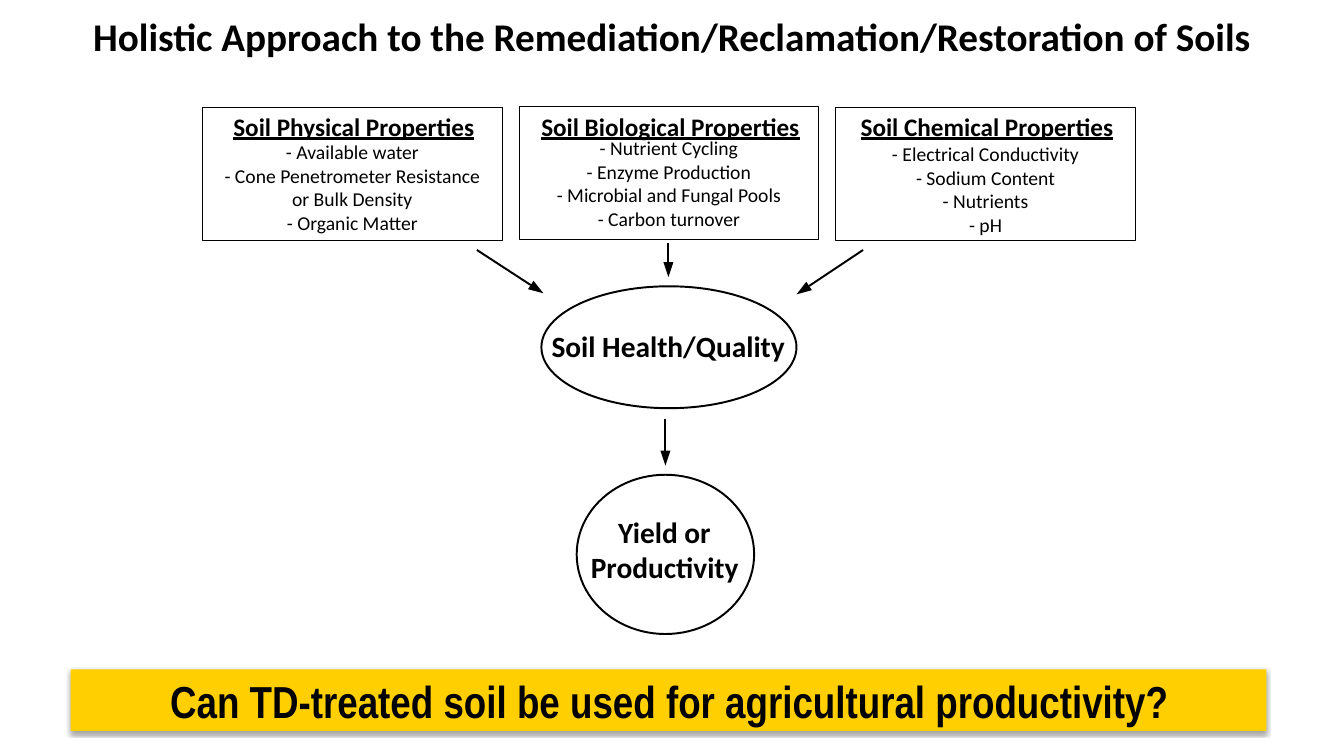
from dataclasses import dataclass
from math import hypot

from lxml.etree import SubElement
from pptx import Presentation
from pptx.dml.color import RGBColor as Rgb
from pptx.enum.shapes import MSO_CONNECTOR as Link, MSO_SHAPE as Form
from pptx.enum.text import MSO_ANCHOR as Anchor, MSO_AUTO_SIZE as Fit, PP_ALIGN as Align
from pptx.oxml.ns import qn
from pptx.util import Inches, Pt


@dataclass(frozen=True)
class Theme:
    ink: Rgb = Rgb(0, 0, 0)
    paper: Rgb = Rgb(255, 255, 255)
    gold: Rgb = Rgb(0xFF, 0xCF, 0x01)
    face: str = "Calibri"
    narrow: str = "Arial Narrow"
    title: float = 28
    head: float = 18
    item: float = 14
    node: float = 21
    claim: float = 32
    thin: float = 0.63
    thick: float = 1.38


class Board:
    def __init__(self, slide, theme):
        self.slide = slide
        self.shapes = slide.shapes
        self.theme = theme

    def place(self, shape, area):
        shape.left, shape.top, shape.width, shape.height = map(Inches, area)

    def letter(self, shape, lines, size, bold=True, under=False, face=None,
               align=Align.CENTER, wrap=True, inset=(0, 0), fit=Fit.NONE):
        frame = shape.text_frame
        frame.word_wrap = wrap
        frame.auto_size = fit
        frame.vertical_anchor = Anchor.TOP
        frame.margin_left = frame.margin_right = Inches(inset[0])
        frame.margin_top = frame.margin_bottom = Inches(inset[1])
        for row, line in enumerate(lines):
            para = frame.add_paragraph() if row else frame.paragraphs[0]
            props = para._p.get_or_add_pPr()
            props.set("marL", "0")
            props.set("indent", "0")
            SubElement(props, qn("a:buNone"))
            para.alignment = align
            para.space_before = Pt(0)
            run = para.add_run()
            run.text = line
            font = run.font
            font.name = face or self.theme.face
            font.size = Pt(size)
            font.bold = bold
            font.underline = under
            font.color.rgb = self.theme.ink

    def title(self, text, area):
        shape = self.shapes.title
        self.place(shape, area)
        shape.fill.solid()
        shape.fill.fore_color.rgb = self.theme.paper
        self.letter(shape, [text], self.theme.title)

    def list(self, spot, lines, area):
        shape = self.slide.placeholders[spot]
        self.place(shape, area)
        self.letter(shape, lines, self.theme.item, bold=False)
        tree = self.shapes._spTree
        tree.remove(shape._element)
        tree.append(shape._element)

    def label(self, text, area, size, **style):
        shape = self.shapes.add_textbox(*map(Inches, area))
        self.letter(shape, [text], size, **style)

    def node(self, text, area):
        self.label(text, area, self.theme.node, align=Align.LEFT,
                   wrap=False, fit=Fit.SHAPE_TO_FIT_TEXT)

    def shape(self, form, area, fill, line=None):
        shape = self.shapes.add_shape(form, *map(Inches, area))
        shape.shadow.inherit = False
        shape.fill.solid()
        shape.fill.fore_color.rgb = fill
        if line:
            shape.line.color.rgb = self.theme.ink
            shape.line.width = Pt(line)
        else:
            shape.line.fill.background()
        return shape

    def banner(self, area):
        shape = self.shape(Form.RECTANGLE, area, self.theme.gold)
        glow = SubElement(
            shape._element.spPr.find(qn("a:effectLst")), qn("a:outerShdw"),
            blurRad=str(Pt(3.1)), dist=str(Pt(1.8)), dir="5400000", rotWithShape="0")
        tint = SubElement(glow, qn("a:srgbClr"), val=str(self.theme.ink))
        SubElement(tint, qn("a:alpha"), val="35000")

    def arrow(self, start, tip, size=0.15, half=0.05):
        (x, y), (a, b) = start, tip
        span = hypot(a - x, b - y)
        u, v = (a - x) / span, (b - y) / span
        neck = a - size * u, b - size * v
        line = self.shapes.add_connector(Link.STRAIGHT, *map(Inches, start + neck))
        line.line.color.rgb = self.theme.ink
        line.line.width = Pt(self.theme.thick)
        SubElement(line._element.spPr, qn("a:effectLst"))
        left = neck[0] - half * v, neck[1] + half * u
        right = neck[0] + half * v, neck[1] - half * u
        edge = self.shapes.build_freeform(*map(Inches, tip))
        edge.add_line_segments([tuple(map(Inches, p)) for p in (left, right)])
        head = edge.convert_to_shape()
        head.shadow.inherit = False
        head.fill.solid()
        head.fill.fore_color.rgb = self.theme.ink
        head.line.fill.background()


GROUPS = [
    ("Soil Physical Properties", 1.07, 1.39,
     ["- Available water", "- Cone Penetrometer Resistance",
      "or Bulk Density", "- Organic Matter"]),
    ("Soil Biological Properties", 1.06, 1.35,
     ["- Nutrient Cycling", "- Enzyme Production",
      "- Microbial and Fungal Pools", "- Carbon turnover"]),
    ("Soil Chemical Properties", 1.07, 1.41,
     ["- Electrical Conductivity", "- Sodium Content", "- Nutrients", "- pH"]),
]
ARROWS = [
    ((4.73, 2.48), (5.39, 2.91)),
    ((6.63, 2.41), (6.63, 2.75)),
    ((8.56, 2.48), (7.9, 2.92)),
    ((6.6, 4.16), (6.6, 4.62)),
]


def main():
    deck = Presentation()
    deck.slide_width, deck.slide_height = Inches(13.33), Inches(7.5)
    slide = deck.slides.add_slide(deck.slide_layouts[4])
    spare = slide.placeholders[4]._element
    spare.getparent().remove(spare)
    theme = Theme()
    board = Board(slide, theme)

    board.title("Holistic Approach to the Remediation/Reclamation/Restoration of Soils",
                (0.79, 0.12, 11.74, 0.77))
    board.banner((0.7, 6.64, 11.86, 0.61))
    for col, (head, top, first, items) in enumerate(GROUPS):
        left = 2.01 + 3.14 * col
        board.shape(Form.RECTANGLE, (left, top, 2.97, 1.32), theme.paper, theme.thin)
        board.label(head, (left + 0.02, 1.1, 2.96, 0.3), theme.head, under=True)
        board.list(col + 1, items, (left + 0.01, first, 2.95, 0.94))

    board.shape(Form.OVAL, (5.37, 2.84, 2.53, 1.21), theme.paper, theme.thick)
    board.node("Soil Health/Quality", (5.47, 3.25, 2.41, 0.35))
    board.shape(Form.OVAL, (5.72, 4.71, 1.76, 1.58), theme.paper, theme.thick)
    board.node("Yield or", (6.13, 5.1, 1.19, 0.45))
    board.node("Productivity", (5.86, 5.45, 1.7, 0.45))
    for start, tip in ARROWS:
        board.arrow(start, tip)
    board.label("Can TD-treated soil be used for agricultural productivity?",
                (0.37, 6.63, 12.55, 0.64), theme.claim, face=theme.narrow,
                inset=(0.1, 0.05))
    deck.save("out.pptx")


if __name__ == "__main__":
    main()
